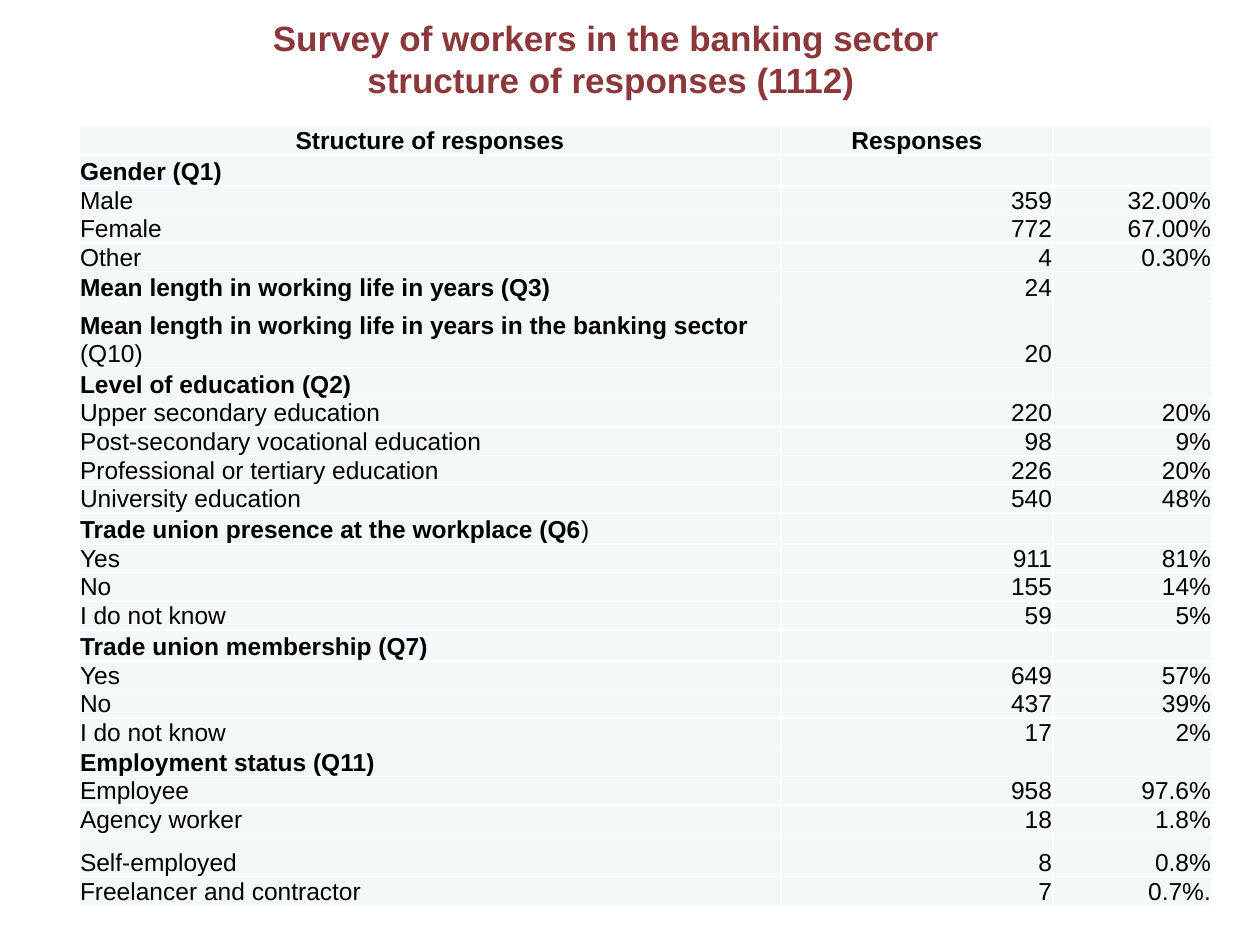
from lxml import etree
from pptx import Presentation
from pptx import util as u
from pptx.dml.color import RGBColor
from pptx.enum import text
from pptx.oxml.ns import qn

PX = 914400 / 126
FONT, TITLE_COLOR, TEXT, FILL, BORDER = "Arial", "8C383A", "000000", "F3F9FA", "FFFFFF"
LEFT, CENTER, RIGHT = text.PP_ALIGN.LEFT, text.PP_ALIGN.CENTER, text.PP_ALIGN.RIGHT

TITLE = "Survey of workers in the banking sector \vstructure of responses (1112)"
# Bold part of the label, plain part of the label, count, share
ROWS = [
    ("Structure of responses", "", "Responses", ""),
    ("Gender (Q1)", "", "", ""),
    ("", "Male", "359", "32.00%"),
    ("", "Female", "772", "67.00%"),
    ("", "Other", "4", "0.30%"),
    ("Mean length in working life in years (Q3)", "", "24", ""),
    ("Mean length in working life in years in the banking sector ", "(Q10)", "20", ""),
    ("Level of education (Q2)", "", "", ""),
    ("", "Upper secondary education", "220", "20%"),
    ("", "Post-secondary vocational education", "98", "9%"),
    ("", "Professional or tertiary education", "226", "20%"),
    ("", "University education", "540", "48%"),
    ("Trade union presence at the workplace (Q6", ")", "", ""),
    ("", "Yes", "911", "81%"),
    ("", "No", "155", "14%"),
    ("", "I do not know", "59", "5%"),
    ("Trade union membership (Q7)", "", "", ""),
    ("", "Yes", "649", "57%"),
    ("", "No", "437", "39%"),
    ("", "I do not know", "17", "2%"),
    ("Employment status (Q11)", "", "", ""),
    ("", "Employee", "958", "97.6%"),
    ("", "Agency worker", "18", "1.8%"),
    ("", "Self-employed", "8", "0.8%"),
    ("", "Freelancer and contractor", "7", "0.7%."),
]
COLUMN_WIDTHS = (702, 272, 159)
TABLE_LEFT, TABLE_TOP, TABLE_HEIGHT = 79, 125, 777
TALL_ROWS = {1: 31, 6: 66, 7: 31, 12: 31, 16: 31, 23: 43}


def px(length):
    return u.Emu(round(length * PX))


def color(value):
    return RGBColor.from_string(value)


def write(paragraph, words, size=14, bold=False, fill=TEXT, align=LEFT):
    paragraph.alignment = align
    paragraph.add_run() if "\v" not in words else paragraph.add_line_break()
    paragraph.clear()
    for index, line in enumerate(words.split("\v")):
        if index:
            paragraph.add_line_break()
        add_run(paragraph, line, size, bold, fill)


def add_run(paragraph, words, size, bold, fill):
    run = paragraph.add_run()
    run.text = words
    run.font.name, run.font.size, run.font.bold = FONT, u.Pt(size), bold
    run.font.color.rgb = color(fill)


def format_cell(cell):
    cell.margin_left = cell.margin_right = px(1)
    cell.margin_top = cell.margin_bottom = 0
    cell.vertical_anchor = text.MSO_ANCHOR.BOTTOM
    properties = cell._tc.get_or_add_tcPr()
    for side in ("a:lnL", "a:lnR", "a:lnT", "a:lnB"):
        line = etree.SubElement(properties, qn(side), w=str(u.Pt(1)))
        solid = etree.SubElement(line, qn("a:solidFill"))
        etree.SubElement(solid, qn("a:srgbClr"), val=BORDER)
    cell.fill.solid()
    cell.fill.fore_color.rgb = color(FILL)


def fill_cell(cell, parts, align):
    """Write (words, bold) parts; an empty cell only gets its text size."""
    format_cell(cell)
    paragraph = cell.text_frame.paragraphs[0]
    paragraph.alignment = align
    shown = [part for part in parts if part[0]]
    for words, bold in shown:
        add_run(paragraph, words, 14, bold, TEXT)
    if not shown:
        etree.SubElement(paragraph._p, qn("a:endParaRPr"), sz="1400")


def add_title(slide):
    title = slide.shapes.title
    title.left, title.top, title.width, title.height = px(44), 0, px(1134), px(157)
    frame = title.text_frame
    frame.word_wrap = True
    frame.auto_size = text.MSO_AUTO_SIZE.NONE
    frame.vertical_anchor = text.MSO_ANCHOR.MIDDLE
    frame.margin_top, frame.margin_bottom = px(6), px(46)
    write(frame.paragraphs[0], TITLE, size=20, bold=True, fill=TITLE_COLOR, align=CENTER)


def add_responses_table(slide):
    table = slide.shapes.add_table(
        len(ROWS), len(COLUMN_WIDTHS), px(TABLE_LEFT), px(TABLE_TOP),
        px(sum(COLUMN_WIDTHS)), px(TABLE_HEIGHT)).table
    table.first_row = table.horz_banding = False
    for column, width in zip(table.columns, COLUMN_WIDTHS):
        column.width = px(width)
    plain_height = (TABLE_HEIGHT - sum(TALL_ROWS.values())) / (len(ROWS) - len(TALL_ROWS))
    for index, (heading, label, count, share) in enumerate(ROWS):
        header = index == 0
        table.rows[index].height = px(TALL_ROWS.get(index, plain_height))
        cells = table.rows[index].cells
        fill_cell(cells[0], [(heading, True), (label, False)], CENTER if header else LEFT)
        for cell, value in zip((cells[1], cells[2]), (count, share)):
            fill_cell(cell, [(value, header)], CENTER if header else RIGHT)


def main():
    presentation = Presentation()
    presentation.slide_width, presentation.slide_height = u.Inches(10), u.Inches(7.5)
    slide = presentation.slides.add_slide(presentation.slide_layouts[5])
    add_title(slide)
    add_responses_table(slide)
    presentation.save("out.pptx")


if __name__ == "__main__":
    main()
